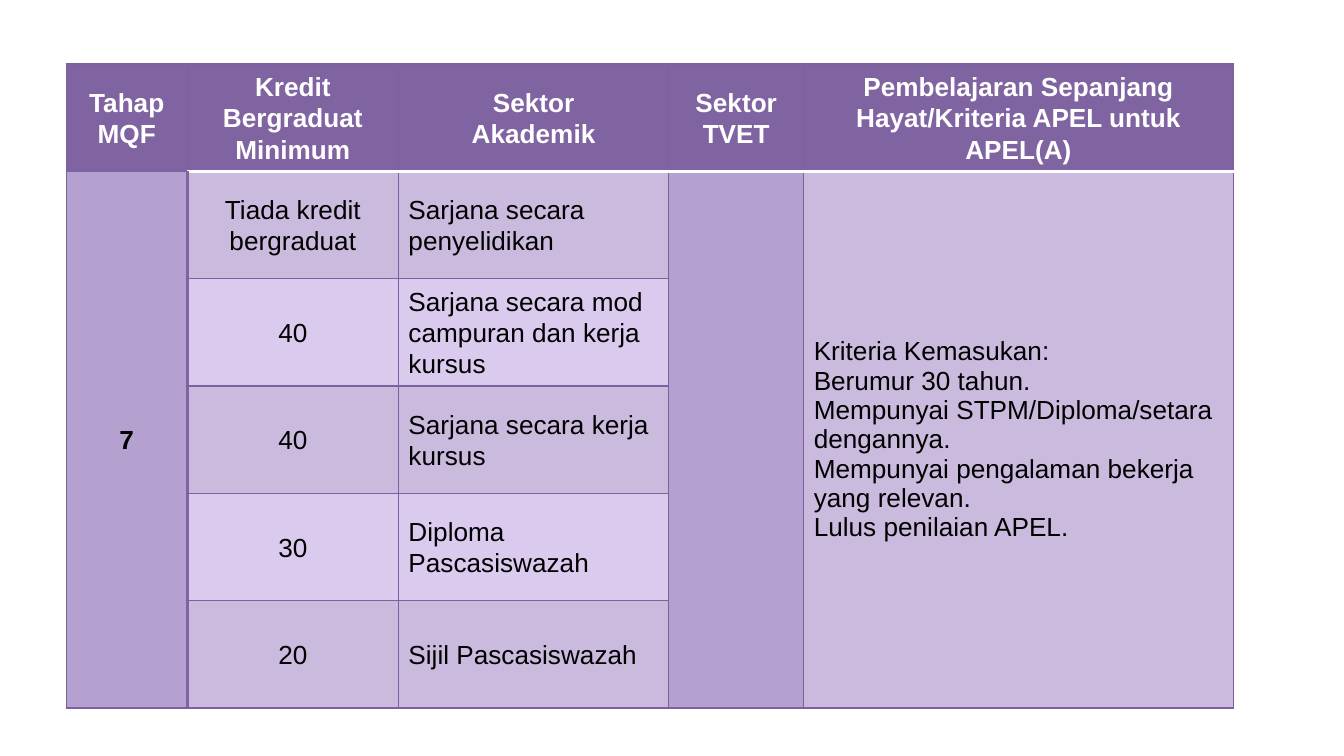
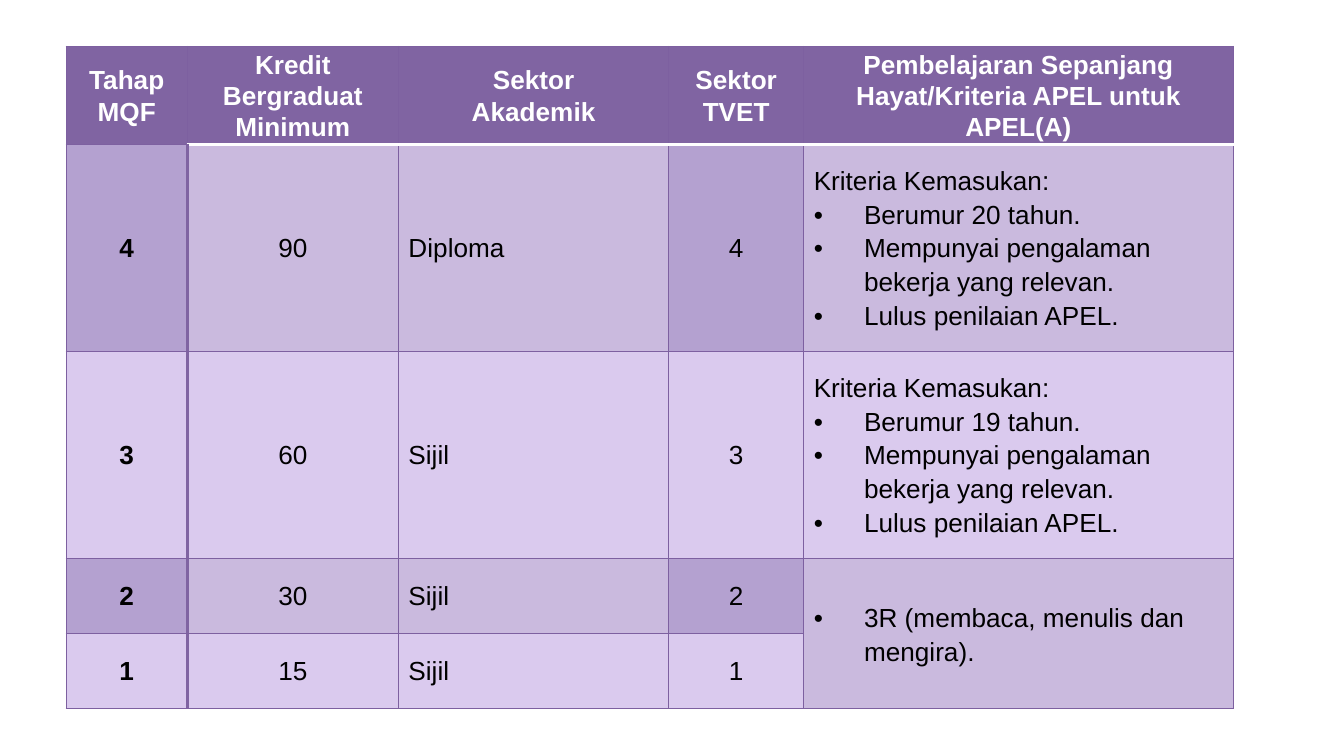
from lxml import etree
from pptx import Presentation
from pptx.dml.color import RGBColor
from pptx.enum.text import MSO_ANCHOR, PP_ALIGN
from pptx.oxml.ns import qn
from pptx.util import Cm, Pt

CENTER = PP_ALIGN.CENTER
LEFT = PP_ALIGN.LEFT
MIDDLE = MSO_ANCHOR.MIDDLE

WHITE = RGBColor(0xFF, 0xFF, 0xFF)
BLACK = RGBColor(0x00, 0x00, 0x00)
PURPLE = RGBColor(0x80, 0x64, 0xA2)
GRID = RGBColor(0x7D, 0x60, 0xA0)
DARK_TINT = RGBColor(0xB4, 0xA1, 0xD0)
TINT = RGBColor(0xCA, 0xBA, 0xDE)
PLAIN = RGBColor(0xDA, 0xCA, 0xEE)

FONT = "Arial"
FONT_SIZE = Pt(14)
BULLET = "•"
LEVEL, CREDIT, ACADEMIC, TVET, CRITERIA = range(5)
COLUMN_WIDTHS = [2.29, 3.99, 5.11, 2.55, 8.12]
TABLE_LEFT = 1.25
SIDE_MARGIN = 0.19
BULLET_INDENT = 0.95

HEADER = [
    ["Tahap MQF"],
    ["Kredit Bergraduat Minimum"],
    ["Sektor", "Akademik"],
    ["Sektor TVET"],
    ["Pembelajaran Sepanjang Hayat/Kriteria APEL untuk APEL(A)"],
]


def entry_criteria(age):
    return [
        "Kriteria Kemasukan:",
        f"{BULLET}Berumur {age} tahun.",
        f"{BULLET}Mempunyai pengalaman bekerja yang relevan.",
        f"{BULLET}Lulus penilaian APEL.",
    ]


POSTGRADUATE_CRITERIA = [
    "Kriteria Kemasukan:",
    "Berumur 30 tahun.",
    "Mempunyai STPM/Diploma/setara dengannya.",
    "Mempunyai pengalaman bekerja yang relevan.",
    "Lulus penilaian APEL.",
]

# None continues the cell above.
SLIDES = [
    {
        "top": 1.21,
        "heights": [2.03] * 6,
        "criteria_spacing": 1.0,
        "rows": [
            [["7"], ["Tiada kredit bergraduat"], ["Sarjana secara penyelidikan"], [],
             POSTGRADUATE_CRITERIA],
            [None, ["40"], ["Sarjana secara mod campuran dan kerja kursus"], None, None],
            [None, ["40"], ["Sarjana secara kerja kursus"], None, None],
            [None, ["30"], ["Diploma Pascasiswazah"], None, None],
            [None, ["20"], ["Sijil Pascasiswazah"], None, None],
        ],
    },
    {
        "top": 0.88,
        "heights": [1.85, 3.91, 3.91, 1.42, 1.42],
        "criteria_spacing": 1.07,
        "rows": [
            [["4"], ["90"], ["Diploma"], ["4"], entry_criteria(20)],
            [["3"], ["60"], ["Sijil"], ["3"], entry_criteria(19)],
            [["2"], ["30"], ["Sijil"], ["2"],
             [f"{BULLET}3R (membaca, menulis dan mengira)."]],
            [["1"], ["15"], ["Sijil"], ["1"], None],
        ],
    },
]


def set_borders(cell, row, column):
    white_line = (WHITE, 2)
    thick_line = (PURPLE, 2)
    thin_line = (GRID, 0.75)
    borders = dict.fromkeys(("lnL", "lnR", "lnT", "lnB"), thin_line)
    if row and column == LEVEL:
        borders["lnR"] = thick_line
    if row and column == CREDIT:
        borders["lnL"] = thick_line
    if column > LEVEL and row == 0:
        borders["lnB"] = white_line
    if column > LEVEL and row == 1:
        borders["lnT"] = white_line
    properties = cell._tc.get_or_add_tcPr()
    for side, (color, width) in borders.items():
        line = etree.SubElement(properties, qn(f"a:{side}"), w=str(Pt(width)))
        fill = etree.SubElement(line, qn("a:solidFill"))
        etree.SubElement(fill, qn("a:srgbClr"), val=str(color))


def fill_color(row, column):
    if row == 0:
        return PURPLE
    if row % 2 == 0:
        return PLAIN
    return DARK_TINT if column in (LEVEL, TVET) else TINT


def add_bullet(paragraph):
    properties = paragraph._p.get_or_add_pPr()
    properties.set("marL", str(Cm(BULLET_INDENT)))
    properties.set("indent", str(-Cm(BULLET_INDENT)))
    etree.SubElement(properties, qn("a:buFont"), typeface=FONT)
    etree.SubElement(properties, qn("a:buChar"), char=BULLET)


def write_cell(cell, texts, row, column, criteria_spacing):
    is_header = row == 0
    for index, text in enumerate(texts):
        frame = cell.text_frame
        paragraph = frame.add_paragraph() if index else frame.paragraphs[0]
        is_bullet = text.startswith(BULLET)
        if is_bullet:
            add_bullet(paragraph)
            paragraph.line_spacing = 1.15
        else:
            is_criteria = column == CRITERIA and not is_header
            paragraph.line_spacing = criteria_spacing if is_criteria else 1.07
        left_aligned = column in (ACADEMIC, CRITERIA) and not is_header
        paragraph.alignment = LEFT if left_aligned else CENTER
        run = paragraph.add_run()
        run.text = text.removeprefix(BULLET)
        run.font.name = FONT
        run.font.size = FONT_SIZE
        run.font.bold = is_header or column == LEVEL
        run.font.color.rgb = WHITE if is_header else BLACK


def merge_continued_cells(table, rows):
    for column in range(len(COLUMN_WIDTHS)):
        starts = [index for index, row in enumerate(rows) if row[column] is not None]
        for start, following in zip(starts, starts[1:] + [len(rows)]):
            if following - start > 1:
                table.cell(start, column).merge(table.cell(following - 1, column))


def add_level_table(slide, content):
    rows = [HEADER] + content["rows"]
    heights = content["heights"]
    table = slide.shapes.add_table(
        len(rows), len(COLUMN_WIDTHS), Cm(TABLE_LEFT), Cm(content["top"]),
        Cm(sum(COLUMN_WIDTHS)), Cm(sum(heights)),
    ).table
    table.horz_banding = False
    table.first_row = False
    for column, width in zip(table.columns, COLUMN_WIDTHS):
        column.width = Cm(width)
    for row, height in zip(table.rows, heights):
        row.height = Cm(height)
    for row, values in enumerate(rows):
        for column, texts in enumerate(values):
            cell = table.cell(row, column)
            cell.margin_left = cell.margin_right = Cm(SIDE_MARGIN)
            cell.margin_top = cell.margin_bottom = 0
            cell.vertical_anchor = MIDDLE
            set_borders(cell, row, column)
            cell.fill.solid()
            cell.fill.fore_color.rgb = fill_color(row, column)
            write_cell(cell, texts or [], row, column, content["criteria_spacing"])
    merge_continued_cells(table, rows)


def main():
    presentation = Presentation()
    presentation.slide_width = Cm(25.4)
    presentation.slide_height = Cm(14.29)
    blank_layout = presentation.slide_layouts[6]
    for content in SLIDES:
        add_level_table(presentation.slides.add_slide(blank_layout), content)
    presentation.save("out.pptx")


if __name__ == "__main__":
    main()
